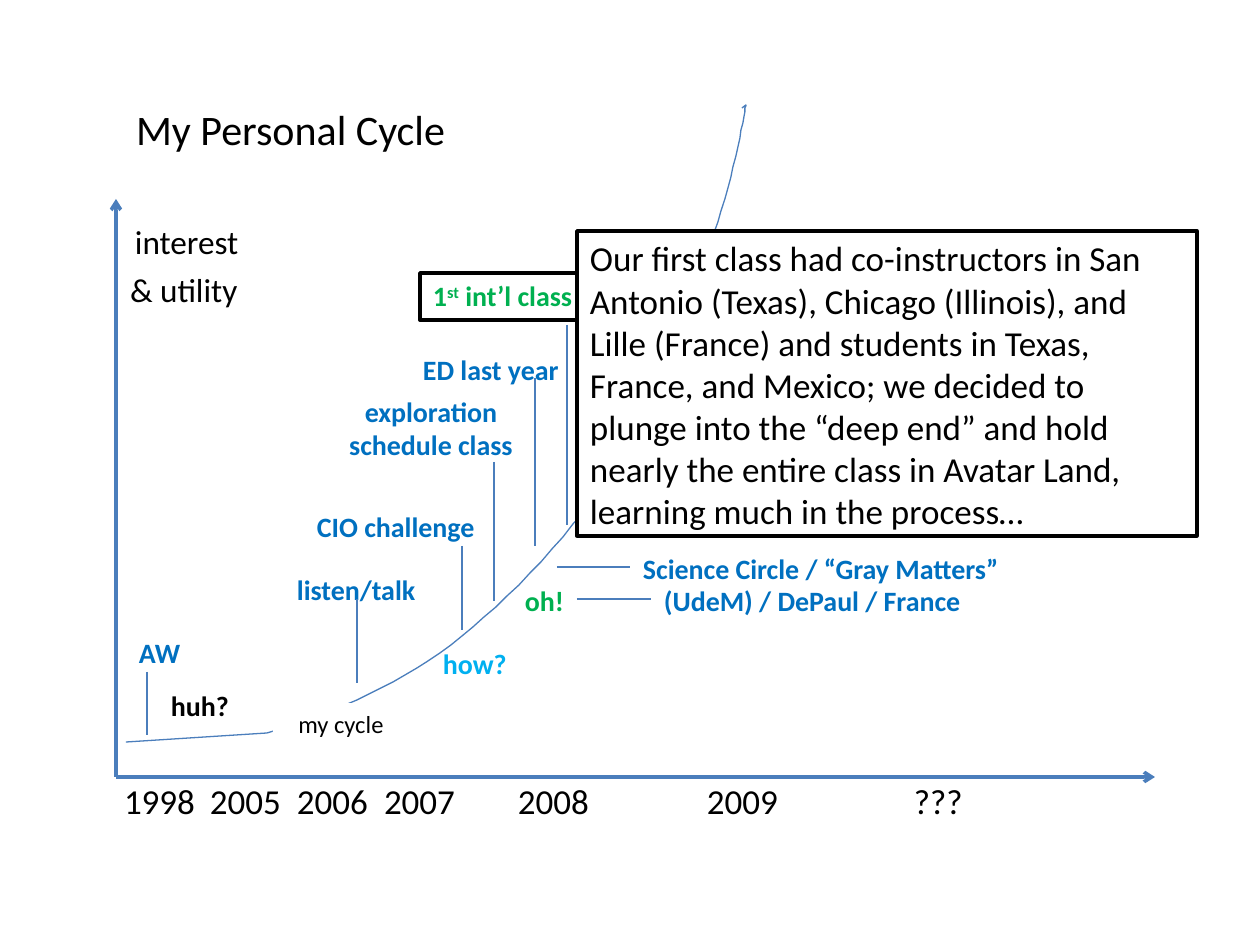
import lxml.etree
import pptx
import pptx.dml.color
import pptx.enum.shapes
import pptx.enum.text
import pptx.oxml.ns
import pptx.util

qn = pptx.oxml.ns.qn
ALIGN = pptx.enum.text.PP_ALIGN
ANCHOR = pptx.enum.text.MSO_ANCHOR
SHAPES = pptx.enum.shapes

COLORS = {
    "black": "000000",
    "white": "FFFFFF",
    "line": "4B7EBC",
    "blue": "0070C0",
    "sky": "00B0F0",
    "green": "00B050",
}


def px(n):
    return pptx.util.Emu(round(n * 914400 / 126))


def rgb(name):
    return pptx.dml.color.RGBColor.from_string(COLORS[name])


def assign(obj, values):
    for name, value in values.items():
        setattr(obj, name, value)


def bezier(p0, p1, p2, p3, steps=16):
    for i in range(1, steps + 1):
        t = i / steps
        u = 1 - t
        yield tuple(
            u**3 * a + 3 * u * u * t * b + 3 * u * t * t * c + t**3 * d
            for a, b, c, d in zip(p0, p1, p2, p3)
        )


class Deck:
    font = "Calibri"
    thin = 0.75
    thick = 2

    def __init__(self):
        self.prs = pptx.Presentation()
        assign(self.prs, {"slide_width": px(1260), "slide_height": px(945)})
        self.s = self.prs.slides.add_slide(self.prs.slide_layouts[5])

    def stroke(self, line, color, width):
        line.color.rgb = rgb(color)
        line.width = pptx.util.Pt(width)

    def fill_text(self, sp, lines, size, color="black", bold=False,
                  align=ALIGN.LEFT, anchor=ANCHOR.TOP, left=13):
        tf = sp.text_frame
        assign(tf, {
            "word_wrap": True, "vertical_anchor": anchor,
            "margin_left": px(left), "margin_right": px(13),
            "margin_top": px(6), "margin_bottom": px(6),
        })
        for i, runs in enumerate(lines):
            p = tf.add_paragraph() if i else tf.paragraphs[0]
            p.alignment = align
            for text, raised in runs:
                r = p.add_run()
                r.text = text
                assign(r.font, {"name": self.font, "size": pptx.util.Pt(size), "bold": bold})
                r.font.color.rgb = rgb(color)
                if raised:
                    r.font._element.set("baseline", "30000")

    def title(self, text, x, y, w, h):
        sp = self.s.shapes.title
        assign(sp, {"left": px(x), "top": px(y), "width": px(w), "height": px(h)})
        self.fill_text(sp, [[(text, False)]], 24, anchor=ANCHOR.MIDDLE)

    def text(self, lines, x, y, w, h, size, **style):
        sp = self.s.shapes.add_textbox(px(x), px(y), px(w), px(h))
        self.fill_text(sp, [[(line, False)] for line in lines], size, **style)

    def box(self, runs, x, y, w, h, size, fill=None, border=False, **style):
        sp = self.s.shapes.add_shape(SHAPES.MSO_SHAPE.RECTANGLE, px(x), px(y), px(w), px(h))
        sp.shadow.inherit = False
        if fill:
            sp.fill.solid()
            sp.fill.fore_color.rgb = rgb(fill)
        else:
            sp.fill.background()
        if border:
            self.stroke(sp.line, "black", self.thick)
        else:
            sp.line.fill.background()
        self.fill_text(sp, [runs], size, **style)

    def line(self, x1, y1, x2, y2, arrow=False):
        sp = self.s.shapes.add_connector(
            SHAPES.MSO_CONNECTOR.STRAIGHT, px(x1), px(y1), px(x2), px(y2))
        self.stroke(sp.line, "line", self.thick if arrow else self.thin)
        if arrow:
            ln = sp._element.spPr.find(qn("a:ln"))
            lxml.etree.SubElement(ln, qn("a:tailEnd"), type="arrow")
        lxml.etree.SubElement(sp._element.spPr, qn("a:effectLst"))

    def curve(self, points):
        builder = self.s.shapes.build_freeform(*points[0], scale=px(1))
        builder.add_line_segments(points[1:], close=False)
        sp = builder.convert_to_shape()
        sp.shadow.inherit = False
        sp.fill.background()
        self.stroke(sp.line, "line", self.thin)


def main():
    d = Deck()
    d.title("My Personal Cycle", 123, 97, 500, 63)

    for text, x, y in [("interest", 122, 215), ("& utility", 117, 263)]:
        d.text([text], x, y, 180, 53, 19)
    years = {"1998": 124, "2005": 210, "2006": 297, "2007": 384,
             "2008": 518, "2009": 707, "???": 914}
    for year, x in years.items():
        d.text([year], x - 13, 773, 105, 55, 20)

    d.line(116, 777, 1155, 777, arrow=True)
    d.line(116, 777, 116, 199, arrow=True)

    points = [(126, 742), (267, 733)]
    for controls in [
        [(321, 717), (392, 690), (451, 645)],
        [(509, 600), (577, 529), (620, 460)],
        [(664, 392), (693, 292), (714, 233)],
        [(735, 174), (746, 105), (746, 105)],
    ]:
        points += bezier(points[-1], *controls)
    d.curve(points + [(742, 108)])

    labels = [
        ("huh?", 158, 683, 95, "black"),
        ("oh!", 512, 578, 95, "green"),
        ("how?", 430, 641, 95, "sky"),
        ("AW", 126, 630, 95, "blue"),
        ("listen/talk", 284, 567, 158, "blue"),
        ("CIO challenge", 304, 504, 252, "blue"),
        ("ED last year", 410, 347, 221, "blue"),
        ("Science Circle / “Gray Matters”", 630, 546, 389, "blue"),
        ("(UdeM) / DePaul / France", 651, 578, 347, "blue"),
    ]
    for text, x, y, w, color in labels:
        d.text([text], x, y, w, 47, 16, color=color, bold=True)
    d.text(["exploration", "schedule class"], 326, 388, 210, 81, 16,
           color="blue", bold=True, align=ALIGN.CENTER)

    for x, top, bottom in [(147, 672, 735), (357, 599, 683), (462, 546, 630),
                           (494, 462, 601), (535, 378, 546), (567, 325, 525)]:
        d.line(x, top, x, bottom)
    for x1, x2, y in [(557, 630, 567), (577, 651, 599)]:
        d.line(x1, y, x2, y)

    d.box([("1", False), ("st", True), (" int’l class", False)],
          420, 273, 199, 47, 16, border=True, color="green", bold=True)
    d.box([("my cycle", False)], 273, 703, 126, 43, 14, fill="white",
          align=ALIGN.CENTER, left=23)
    d.box([("Our first class had co-instructors in San Antonio (Texas), Chicago "
            "(Illinois), and Lille (France) and students in Texas, France, and "
            "Mexico; we decided to plunge into the “deep end” and hold nearly the "
            "entire class in Avatar Land, learning much in the process…", False)],
          577, 231, 620, 305, 20, fill="white", border=True)

    d.prs.save("out.pptx")


if __name__ == "__main__":
    main()
